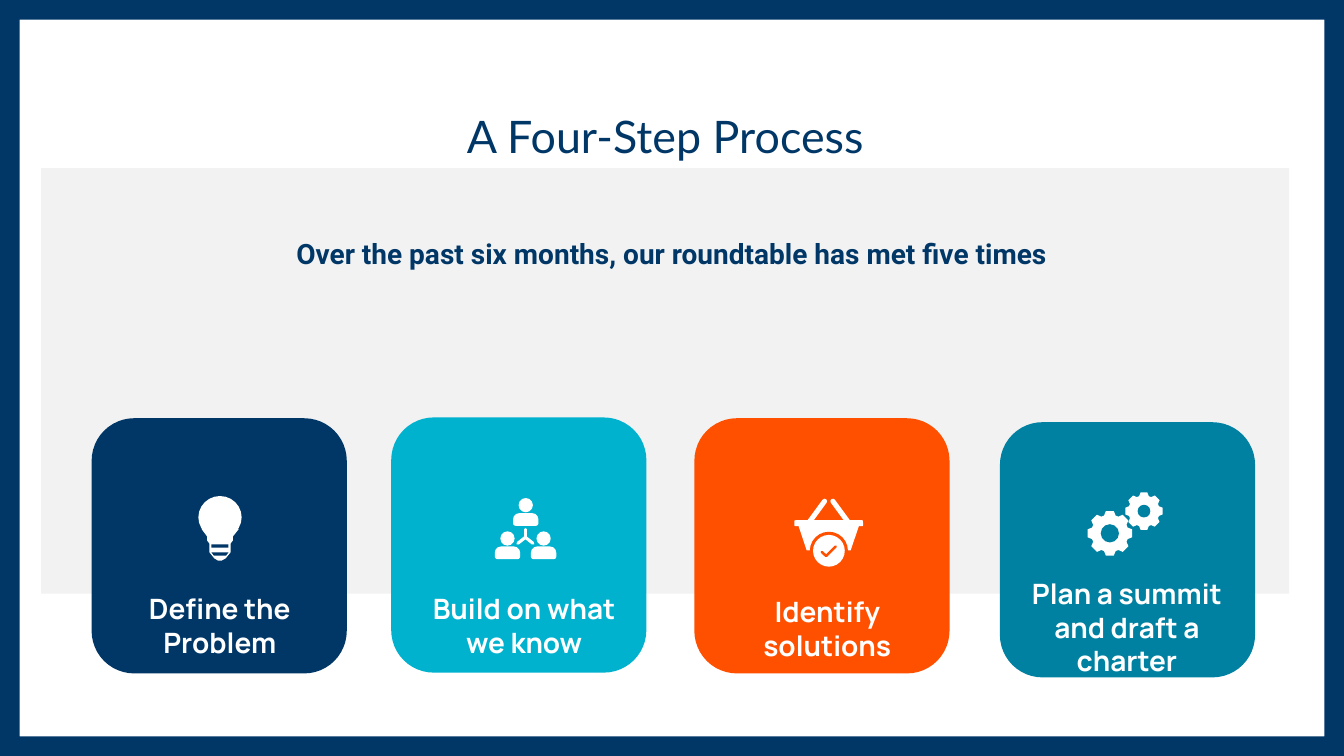
"""Build the four-step process slide with its cards and icons."""
from dataclasses import dataclass
from math import cos, pi, sin

from lxml.etree import SubElement
from pptx import Presentation
from pptx.dml.color import RGBColor
from pptx.enum.shapes import MSO_CONNECTOR as Link, MSO_SHAPE as Preset
from pptx.enum.text import MSO_ANCHOR as Anchor, MSO_AUTO_SIZE as AutoSize, PP_ALIGN as Align
from pptx.oxml.ns import qn
from pptx.util import Cm, Pt


@dataclass(frozen=True)
class Theme:
    navy: str = "003767"
    cyan: str = "00B2CE"
    orange: str = "FF5000"
    teal: str = "0081A1"
    gray: str = "F2F2F2"
    white: str = "FFFFFF"
    title_size: int = 32
    body_size: int = 20
    title_font: str = "Lato"
    lead_font: str = "Roboto"
    card_font: str = "Manrope"


THEME = Theme()
WIDTH, HEIGHT = 33.87, 19.05
CARD_SIDE = 6.43
LABEL_WIDTH = 5.84

TITLE = "A Four-Step Process"
LEAD = "Over the past six months, our roundtable has met five times"
CARDS = [
    {"text": "Define the Problem", "fill": THEME.navy, "card": (2.31, 10.54),
     "label": (2.62, 14.78, 1.96), "icon": "bulb", "icon_at": (5.0, 12.5)},
    {"text": "Build on what we know", "fill": THEME.cyan, "card": (9.86, 10.52),
     "label": (10.29, 14.78, 1.96), "icon": "team", "icon_at": (12.47, 12.55)},
    {"text": "Identify solutions", "fill": THEME.orange, "card": (17.5, 10.54),
     "label": (17.93, 14.86, 1.96), "icon": "basket", "icon_at": (20.02, 12.55)},
    {"text": "Plan a summit and draft a charter", "fill": THEME.teal, "card": (25.2, 10.64),
     "label": (25.48, 14.4, 2.82), "icon": "gears", "icon_at": (27.43, 12.42)},
]

BULB_BASE = [(0.08, 0.83), (1.02, 0.83), (0.87, 1.02), (0.87, 1.12), (0.81, 1.2),
             (0.81, 1.42), (0.69, 1.57), (0.58, 1.63), (0.5, 1.63), (0.4, 1.57),
             (0.28, 1.42), (0.28, 1.2), (0.22, 1.12), (0.22, 1.02)]
BULB_CAP = [(0.33, 1.42), (0.76, 1.42), (0.7, 1.5), (0.39, 1.5)]
PEOPLE = [(0.46, 0), (0, 0.84), (0.91, 0.84)]
TEAM_HUB = (0.77, 0.99)
TEAM_ARMS = [(0.77, 0.79), (0.58, 1.14), (0.96, 1.14)]
BASKET_BODY = [(0.1, 0.69), (1.63, 0.69), (1.42, 1.32), (0.31, 1.32)]
BASKET_HANDLES = [((0.38, 0.6), (0.76, 0.08)), ((1.35, 0.6), (0.97, 0.08))]
CHECK = [(0.69, 1.36), (0.8, 1.46), (1.04, 1.22)]
GEARS = [(0.54, 1.02, 0.56, 0.23), (1.4, 0.46, 0.47, 0.16)]
TOOTH = [(0.8, -0.26), (1, -0.18), (1, 0.18), (0.8, 0.26)]
TEETH = 8


def paint(shape, color):
    shape.shadow.inherit = False
    shape.fill.solid()
    shape.fill.fore_color.rgb = RGBColor.from_string(color)
    shape.line.fill.background()


def write(box, text, font, size, color, bold=False):
    frame = box.text_frame
    frame.word_wrap = True
    para = frame.paragraphs[0]
    para.text = text
    para.alignment = Align.CENTER
    para.font.name, para.font.size, para.font.bold = font, Pt(size), bold
    para.font.color.rgb = RGBColor.from_string(color)
    return frame


def add_text(page, area, text, font, color):
    box = page.shapes.add_textbox(*map(Cm, area))
    frame = write(box, text, font, THEME.body_size, color, True)
    frame.auto_size = AutoSize.SHAPE_TO_FIT_TEXT


@dataclass
class Canvas:
    """Draw shapes in centimetres from an origin on the page."""
    page: object
    left: float = 0
    top: float = 0

    def place(self, point):
        return Cm(self.left + point[0]), Cm(self.top + point[1])

    def shape(self, preset, area, color):
        shape = self.page.shapes.add_shape(preset, *self.place(area[:2]), *map(Cm, area[2:]))
        paint(shape, color)
        return shape

    def disc(self, x, y, radius, color):
        self.shape(Preset.OVAL, (x - radius, y - radius, 2 * radius, 2 * radius), color)

    def polygon(self, points, color):
        first, *rest = map(self.place, points)
        builder = self.page.shapes.build_freeform(*first)
        builder.add_line_segments(rest, close=True)
        paint(builder.convert_to_shape(), color)

    def stroke(self, start, end, color, width):
        line = self.page.shapes.add_connector(Link.STRAIGHT, *self.place(start), *self.place(end))
        line.line.color.rgb = RGBColor.from_string(color)
        line.line.width = Pt(width)
        line.line._get_or_add_ln().set("cap", "rnd")
        SubElement(line._element.spPr, qn("a:effectLst"))


def draw_bulb(canvas, ground):
    canvas.shape(Preset.OVAL, (0, 0, 1.09, 1.07), THEME.white)
    canvas.polygon(BULB_BASE, THEME.white)
    canvas.shape(Preset.RECTANGLE, (0.33, 1.22, 0.43, 0.08), ground)
    canvas.polygon(BULB_CAP, ground)


def draw_team(canvas, ground):
    for x, y in PEOPLE:
        canvas.disc(x + 0.32, y + 0.18, 0.18, THEME.white)
        body = canvas.shape(Preset.ROUND_2_SAME_RECTANGLE, (x, y + 0.38, 0.64, 0.32), THEME.white)
        body.adjustments[0], body.adjustments[1] = 0.5, 0.2
    for arm in TEAM_ARMS:
        canvas.stroke(TEAM_HUB, arm, THEME.white, 2.2)


def draw_basket(canvas, ground):
    canvas.polygon(BASKET_BODY, THEME.white)
    canvas.shape(Preset.ROUNDED_RECTANGLE, (0, 0.56, 1.73, 0.15), THEME.white)
    for start, end in BASKET_HANDLES:
        canvas.stroke(start, end, THEME.white, 3.6)
    for radius, color in ((0.48, ground), (0.4, THEME.white)):
        canvas.disc(0.87, 1.33, radius, color)
    for start, end in zip(CHECK, CHECK[1:]):
        canvas.stroke(start, end, ground, 1.8)


def draw_gears(canvas, ground):
    for x, y, radius, hole in GEARS:
        turns = [2 * pi * tooth / TEETH for tooth in range(TEETH)]
        outline = [(x + radius * (u * cos(turn) - v * sin(turn)),
                    y + radius * (u * sin(turn) + v * cos(turn)))
                   for turn in turns for u, v in TOOTH]
        canvas.polygon(outline, THEME.white)
        canvas.disc(x, y, hole, ground)


ICONS = {"bulb": draw_bulb, "team": draw_team, "basket": draw_basket, "gears": draw_gears}


def add_title(page):
    title = page.shapes.title
    title.left, title.top, title.width, title.height = map(Cm, (1.04, 2.67, 31.45, 1.42))
    frame = write(title, TITLE, THEME.title_font, THEME.title_size, THEME.navy)
    frame.margin_left = frame.margin_right = frame.margin_top = frame.margin_bottom = 0
    frame.vertical_anchor = Anchor.BOTTOM
    frame.auto_size = AutoSize.NONE
    frame.paragraphs[0].line_spacing = 0.85


def main():
    deck = Presentation()
    deck.slide_width, deck.slide_height = Cm(WIDTH), Cm(HEIGHT)
    page = deck.slides.add_slide(deck.slide_layouts[5])
    canvas = Canvas(page)
    border = canvas.shape(Preset.FRAME, (0, 0, WIDTH, HEIGHT), THEME.navy)
    border.adjustments[0] = 0.026
    canvas.shape(Preset.RECTANGLE, (1.04, 4.24, 31.45, 10.72), THEME.gray)
    add_title(page)
    add_text(page, (3.71, 5.84, 26.44, 1.12), LEAD, THEME.lead_font, THEME.navy)
    for card in CARDS:
        canvas.shape(Preset.ROUNDED_RECTANGLE, (*card["card"], CARD_SIDE, CARD_SIDE), card["fill"])
        ICONS[card["icon"]](Canvas(page, *card["icon_at"]), card["fill"])
        left, top, height = card["label"]
        add_text(page, (left, top, LABEL_WIDTH, height), card["text"],
                 THEME.card_font, THEME.white)
    deck.save("out.pptx")


if __name__ == "__main__":
    main()
